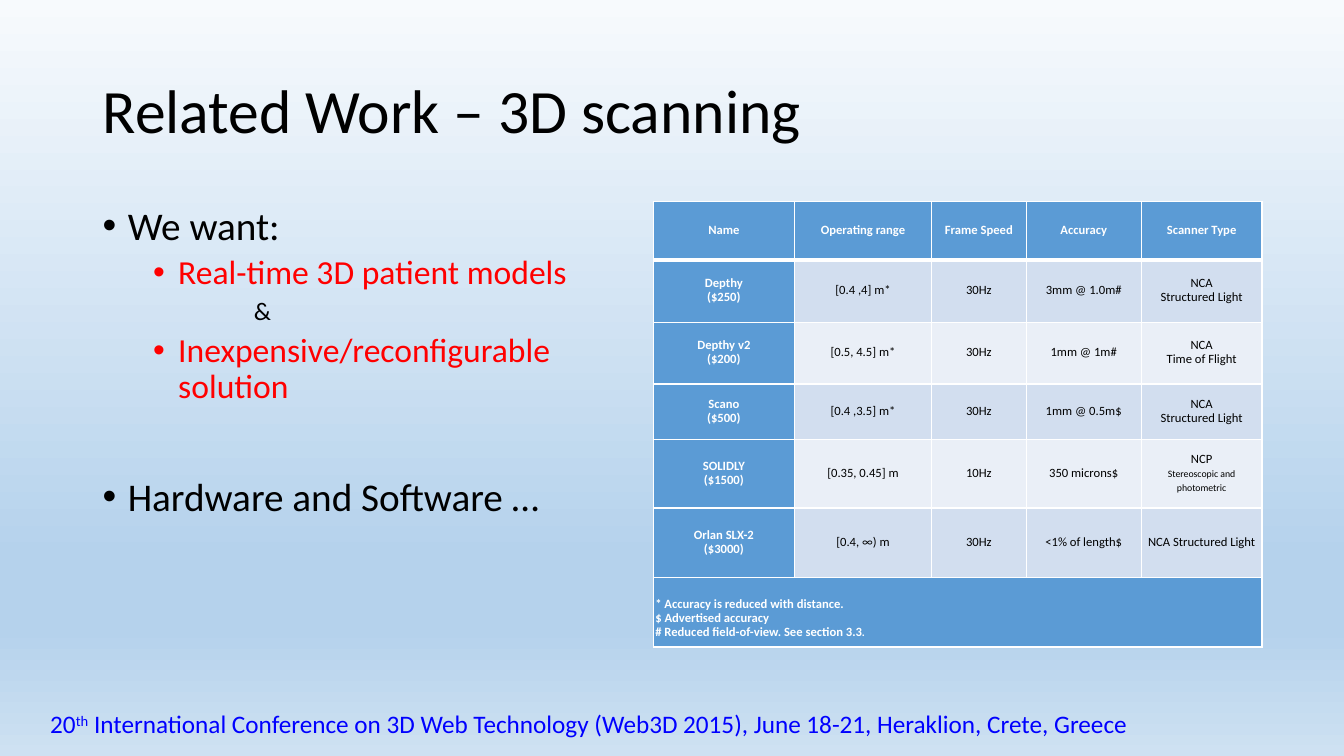
from dataclasses import dataclass

from lxml import etree
from pptx import Presentation
from pptx import util as u
from pptx.dml import color
from pptx.enum import text
from pptx.oxml import ns


@dataclass(frozen=True)
class Theme:
    font: str = "Calibri"
    ink: str = "000000"
    accent: str = "FF0000"
    link: str = "0000FF"
    white: str = "FFFFFF"
    header: str = "5B9BD5"
    bands: tuple = ("D2DEEF", "EAEFF7")
    sky: tuple = ((0, "F7FAFD"), (74, "B5D2EC"), (83, "B5D2EC"), (100, "CEE1F2"))
    title: int = 44
    body: int = 28
    sub: int = 24
    note: int = 18
    cell: int = 9
    dot: int = 8
    small: int = 7


def assign(target, values):
    for name, value in values.items():
        setattr(target, name, value)


def add(parent, tag, **attrs):
    return etree.SubElement(parent, ns.qn(tag), attrs)


class Deck:
    def __init__(self, theme):
        self.theme = theme
        self.prs = Presentation()
        assign(self.prs, dict(slide_width=u.Inches(13.33), slide_height=u.Inches(7.5)))
        self.s = self.prs.slides.add_slide(self.prs.slide_layouts[6])

    def cols(self, n):
        return int(self.prs.slide_width * n / 100)

    def rows(self, n):
        return int(self.prs.slide_height * n / 100)

    def box(self, left, top, width, height):
        return self.cols(left), self.rows(top), self.cols(width), self.rows(height)

    def background(self):
        fill = self.s.background.fill
        fill.gradient()
        fill.gradient_angle = 270
        stops = next(self.s.background._cSld.iter(ns.qn("a:gsLst")))
        for stop in list(stops):
            stops.remove(stop)
        for position, rgb in self.theme.sky:
            stop = add(stops, "a:gs", pos=str(position * 1000))
            add(stop, "a:srgbClr", val=rgb)

    def run(self, p, words, size, rgb, bold=False, baseline=0):
        r = p.add_run()
        r.text = words
        assign(r.font, dict(size=u.Pt(size), name=self.theme.font, bold=bold))
        r.font.color.rgb = color.RGBColor.from_string(rgb)
        if baseline:
            r.font._element.set("baseline", str(baseline * 1000))

    def paragraphs(self, tf, items):
        for i, (runs, layout) in enumerate(items):
            p = tf.paragraphs[0] if i == 0 else tf.add_paragraph()
            assign(p, layout)
            for values in runs:
                self.run(p, **values)
            yield p

    def text(self, place, items, **frame):
        tf = self.s.shapes.add_textbox(*self.box(*place)).text_frame
        assign(tf, dict(word_wrap=True) | frame)
        return list(self.paragraphs(tf, items))

    def indent(self, p, left, bullet):
        pPr = p._p.get_or_add_pPr()
        pPr.set("marL", str(u.Inches(left)))
        pPr.set("indent", str(u.Inches(-0.25 if bullet else 0)))
        if bullet:
            add(pPr, "a:buFont", typeface="Arial")
            add(pPr, "a:buChar", char="•")
        else:
            add(pPr, "a:buNone")

    def bullets(self, place, items):
        lines = [([dict(words=words, size=size, rgb=rgb)],
                  dict(line_spacing=0.9, space_before=u.Pt(before)))
                 for words, size, rgb, before, left, bullet in items]
        for p, item in zip(self.text(place, lines), items):
            self.indent(p, *item[4:])

    def borders(self, cell, top, bottom):
        tcPr = cell._tc.get_or_add_tcPr()
        for side, width in zip("LRTB", (1, 1, top, bottom)):
            ln = add(tcPr, f"a:ln{side}", w=str(u.Pt(width)))
            add(add(ln, "a:solidFill"), "a:srgbClr", val=self.theme.white)

    def cell(self, cell, items, fill, align, top=1, bottom=1, inset=0):
        self.borders(cell, top, bottom)
        cell.fill.solid()
        cell.fill.fore_color.rgb = color.RGBColor.from_string(fill)
        assign(cell, dict(margin_left=u.Inches(0.02), margin_right=u.Inches(0.02),
                          margin_top=u.Pt(inset), margin_bottom=0,
                          vertical_anchor=text.MSO_ANCHOR.MIDDLE))
        layout = dict(alignment=align, line_spacing=u.Pt(10))
        list(self.paragraphs(cell.text_frame, [(runs, layout) for runs in items]))

    def table(self, place, widths, heights, data, notes):
        t = self.theme
        table = self.s.shapes.add_table(len(heights), len(widths), *self.box(*place)).table
        assign(table, dict(first_row=False, horz_banding=False))
        for column, width in zip(table.columns, widths):
            column.width = self.cols(width)
        for row, height in zip(table.rows, heights):
            row.height = self.rows(height)
        for i, record in enumerate(data):
            for j, words in enumerate(record):
                strong = i == 0 or j == 0
                rgb = t.white if strong else t.ink
                items = [[dict(words=line, rgb=rgb, bold=strong,
                               size=t.small if line.startswith("Stereo") else t.cell)]
                         for line in words.split("\n")]
                self.cell(table.cell(i, j), items, t.header if strong else t.bands[(i - 1) % 2],
                          text.PP_ALIGN.CENTER, top=3 if i == 1 else 1, bottom=3 if i == 0 else 1)
        last = len(heights) - 1
        footer = table.cell(last, 0)
        footer.merge(table.cell(last, len(widths) - 1))
        items = [[dict(words=line, size=t.cell, rgb=t.white, bold=True)] for line in notes]
        items[-1].append(dict(words=".", size=t.dot, rgb=t.white, bold=True))
        self.cell(footer, items, t.header, text.PP_ALIGN.LEFT, inset=10)


SCANNERS = [
    ("Name", "Operating range", "Frame Speed", "Accuracy", "Scanner Type"),
    ("Depthy\n($250)", "[0.4 ,4] m*", "30Hz", "3mm @ 1.0m#", "NCA\nStructured Light"),
    ("Depthy v2\n($200)", "[0.5, 4.5] m*", "30Hz", "1mm @ 1m#", "NCA\nTime of Flight"),
    ("Scano\n($500)", "[0.4 ,3.5] m*", "30Hz", "1mm @ 0.5m$", "NCA\nStructured Light"),
    ("SOLIDLY\n($1500)", "[0.35, 0.45] m", "10Hz", "350 microns$",
     "NCP\nStereoscopic and photometric"),
    ("Orlan SLX-2\n($3000)", "[0.4, ∞) m", "30Hz", "<1% of length$", "NCA Structured Light"),
]
NOTES = ("* Accuracy is reduced with distance.", "$ Advertised accuracy",
         "# Reduced field-of-view. See section 3.3")


def main():
    t = Theme()
    deck = Deck(t)
    deck.background()
    deck.text((6.9, 5.33, 86.27, 19.33),
              [([dict(words="Related Work – 3D scanning", size=t.title, rgb=t.ink)],
                dict(line_spacing=0.9))],
              vertical_anchor=text.MSO_ANCHOR.MIDDLE)
    deck.bullets((6.9, 26.67, 41, 63.5), [
        ("We want:", t.body, t.ink, 10, 0.25, True),
        ("Real-time 3D patient models", t.sub, t.accent, 5, 0.75, True),
        ("&", t.note, t.ink, 5, 1.5, False),
        ("Inexpensive/reconfigurable solution", t.sub, t.accent, 5, 0.75, True),
        ("Hardware and Software …", t.body, t.ink, 51, 0.25, True),
    ])
    deck.table((48.61, 26.67, 45.3, 58.93), (10.5, 10.2, 7.05, 8.55, 9),
               (7.73, 8.27, 8.13, 7.33, 9.07, 9.2, 9.2), SCANNERS, NOTES)
    conference = dict(size=t.note, rgb=t.link)
    deck.text((3, 93.07, 83, 5.33), [([
        dict(words="20") | conference,
        dict(words="th", baseline=30) | conference,
        dict(words=" International Conference on 3D Web Technology (Web3D 2015), "
                   "June 18-21, Heraklion, Crete, Greece") | conference,
    ], {})], word_wrap=False, auto_size=text.MSO_AUTO_SIZE.SHAPE_TO_FIT_TEXT)
    deck.prs.save("out.pptx")


if __name__ == "__main__":
    main()
